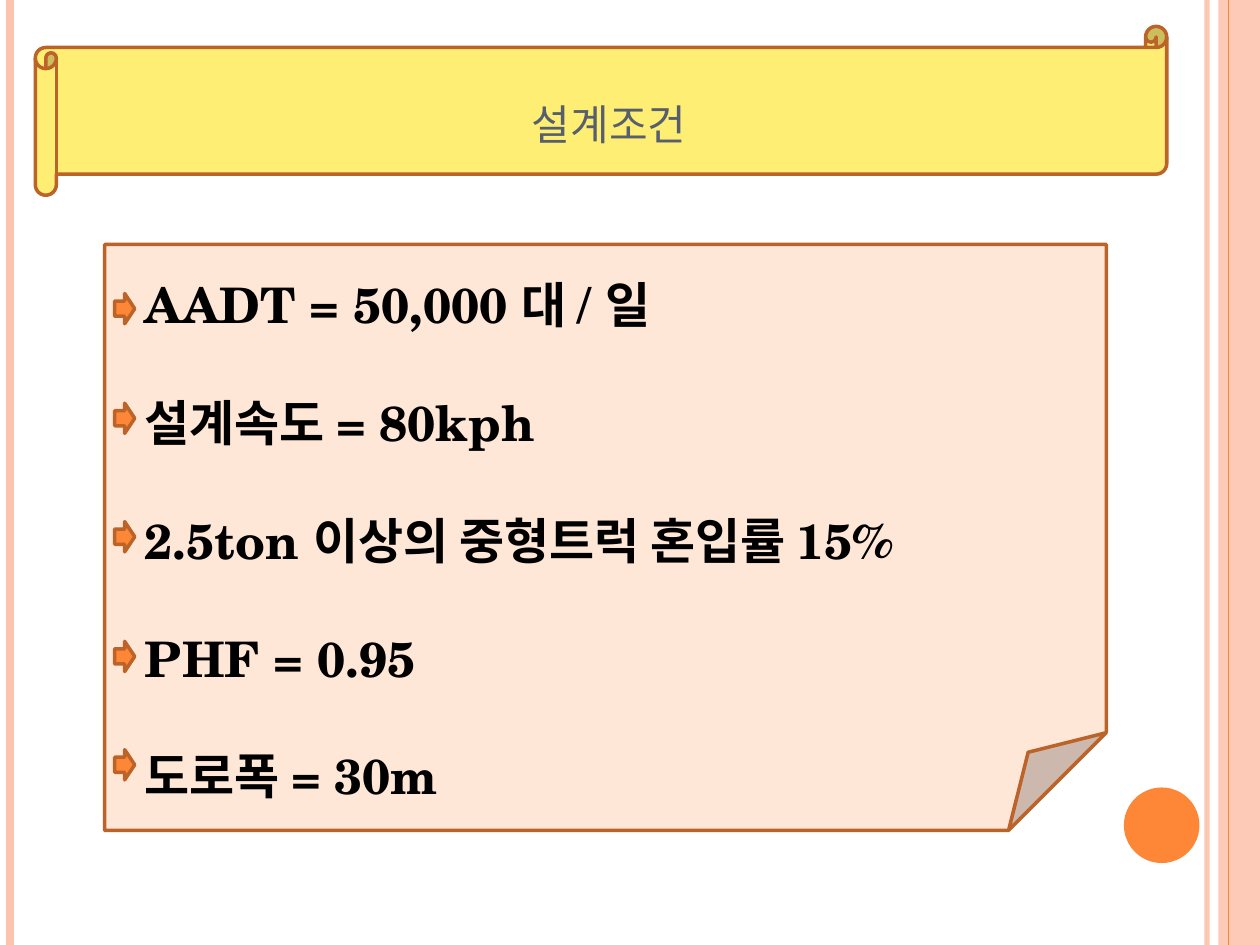
from lxml import etree
from pptx import Presentation
from pptx.dml.color import RGBColor
from pptx.enum import shapes, text
from pptx.oxml import ns
from pptx.util import Inches, Pt

COLORS = {"peach": "FEC3AE", "orange": "FE8637", "brown": "BC6329",
          "yellow": "FFEE74", "cream": "FFE7D7", "slate": "575F6D",
          "black": "000000"}
FONT = "TeX Gyre Schola"
SHAPE = shapes.MSO_SHAPE


def add_filled(kind, box, fill, outline=None):
    sp = s.shapes.add_shape(kind, *[Inches(v) for v in box])
    sp.shadow.inherit = False
    sp.fill.solid()
    sp.fill.fore_color.rgb = RGBColor.from_string(COLORS[fill])
    if outline:
        sp.line.color.rgb = RGBColor.from_string(COLORS[outline])
        sp.line.width = Pt(2)
    else:
        sp.line.fill.background()
    return sp


def set_alpha(sp, percent):
    color = next(sp._element.spPr.iter(ns.qn("a:srgbClr")))
    etree.SubElement(color, ns.qn("a:alpha")).set("val", str(percent * 1000))


prs = Presentation()
prs.slide_width, prs.slide_height = Inches(10), Inches(7.5)
s = prs.slides.add_slide(prs.slide_layouts[6])

band = add_filled(SHAPE.RECTANGLE, (9.67, 0, 0.33, 7.5), "peach")
set_alpha(band, 87)
for x, color, width, alpha in [(9.58, "peach", 3, 93), (0.08, "peach", 4.5, 100),
                               (9.75, "orange", 0.75, 100)]:
    rule = s.shapes.add_connector(shapes.MSO_CONNECTOR.STRAIGHT,
                                  Inches(x), 0, Inches(x), Inches(7.5))
    rule.line.color.rgb = RGBColor.from_string(COLORS[color])
    rule.line.width = Pt(width)
    etree.SubElement(rule._element.spPr, ns.qn("a:effectLst"))
    if alpha < 100:
        set_alpha(rule, alpha)

add_filled(SHAPE.OVAL, (8.92, 6.25, 0.6, 0.6), "orange")
add_filled(SHAPE.HORIZONTAL_SCROLL, (0.28, 0.21, 8.98, 1.34), "yellow", "brown")

title = s.shapes.add_textbox(Inches(0.5), Inches(0.36), Inches(8.67), Inches(0.87))
tf = title.text_frame
tf.word_wrap = True
tf.vertical_anchor = text.MSO_ANCHOR.BOTTOM
p = tf.paragraphs[0]
p.text = "설계조건"
p.alignment = text.PP_ALIGN.CENTER
p.font.name, p.font.size = FONT, Pt(24)
p.font.color.rgb = RGBColor.from_string(COLORS["slate"])

note = add_filled(SHAPE.FOLDED_CORNER, (0.83, 1.94, 7.95, 4.65), "cream", "brown")
tf = note.text_frame
tf.word_wrap = True
tf.vertical_anchor = text.MSO_ANCHOR.TOP
tf.margin_left, tf.margin_top, tf.margin_bottom = Inches(0.32), Inches(0.24), 0
conditions = [("AADT = 50,000 대 / 일", 2.33), ("설계속도 = 80kph", 3.2),
              ("2.5ton 이상의 중형트럭 혼입률 15%", 4.14),
              ("PHF = 0.95", 5.09), ("도로폭 = 30m", 5.95)]
for i, (condition, arrow_top) in enumerate(conditions):
    p = tf.add_paragraph() if i else tf.paragraphs[0]
    p.text = condition
    p.alignment = text.PP_ALIGN.LEFT
    p.space_before = Pt(33.7 if i else 0)
    p.font.name, p.font.size, p.font.bold = FONT, Pt(28), True
    p.font.color.rgb = RGBColor.from_string(COLORS["black"])
    add_filled(SHAPE.RIGHT_ARROW, (0.91, arrow_top, 0.16, 0.24), "orange", "brown")

prs.save("out.pptx")
